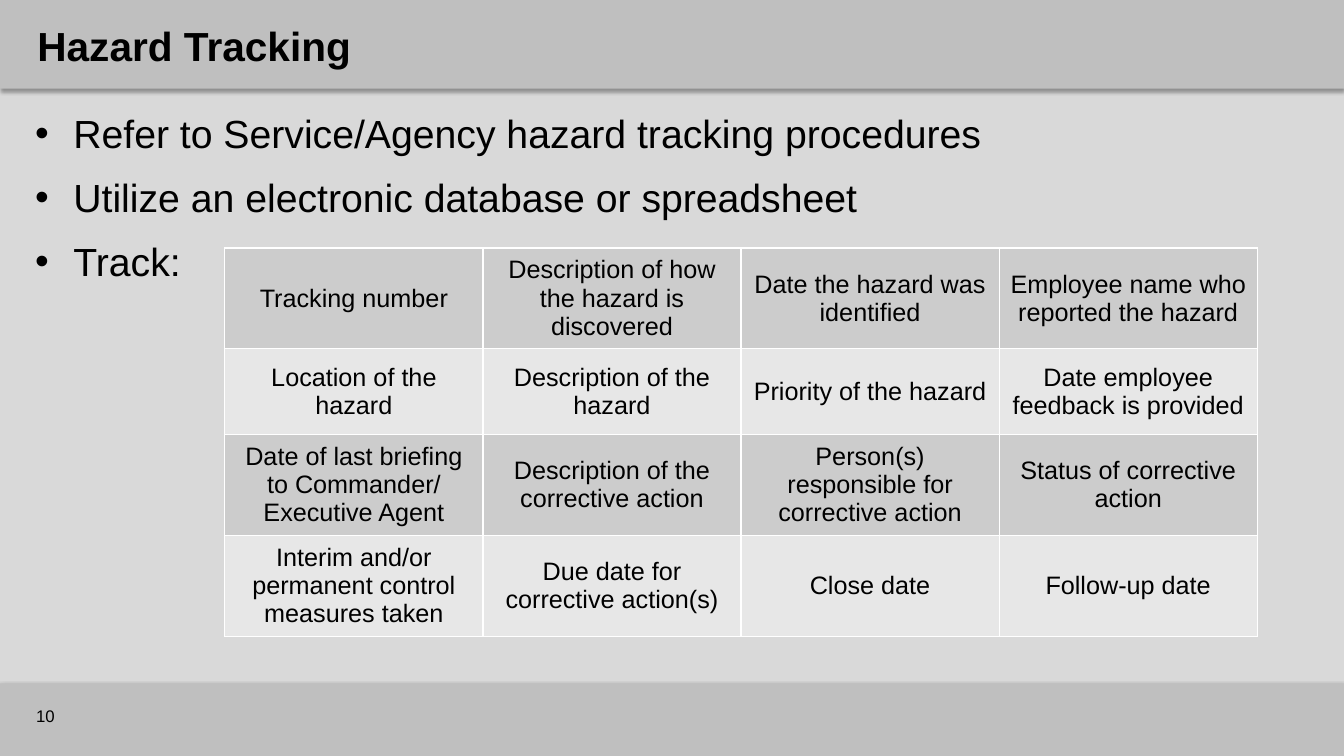
"""Build the Hazard Tracking slide with its bullets and tracking table."""
from pptx import Presentation
from pptx.dml.color import RGBColor
from pptx.enum import shapes, text
from pptx.oxml import parse_xml
from pptx.oxml.ns import nsdecls
from pptx.util import Inches, Pt

TITLE = "Hazard Tracking"
PAGE = "10"
BULLETS = [
    "Refer to Service/Agency hazard tracking procedures",
    "Utilize an electronic database or spreadsheet",
    "Track:",
]
TRACKED = [
    ["Tracking number", "Description of how the hazard is discovered",
     "Date the hazard was identified", "Employee name who reported the hazard"],
    ["Location of the hazard", "Description of the hazard",
     "Priority of the hazard", "Date employee feedback is provided"],
    ["Date of last briefing to Commander/ Executive Agent",
     "Description of the corrective action",
     "Person(s) responsible for corrective action", "Status of corrective action"],
    ["Interim and/or permanent control measures taken",
     "Due date for corrective action(s)", "Close date", "Follow-up date"],
]
WIDTH, HEIGHT = 13.33, 7.5
BARS = [(0, 0.88), (6.78, 0.72)]
COLUMN_WIDTH, ROW_HEIGHT = 2.56, 0.85
BACKGROUND, BAR, BLACK, WHITE = "D9D9D9", "BFBFBF", "000000", "FFFFFF"
BANDS = ["CCCCCC", "E7E7E7"]


def paint(fill, color):
    fill.solid()
    fill.fore_color.rgb = RGBColor.from_string(color)


def write(paragraph, words, size, bold=False):
    run = paragraph.add_run()
    run.text = words
    run.font.name = "Arial"
    run.font.size = Pt(size)
    run.font.bold = bold
    run.font.color.rgb = RGBColor.from_string(BLACK)


def add_bar(slide, top, height):
    bar = slide.shapes.add_shape(shapes.MSO_SHAPE.RECTANGLE, 0, Inches(top),
                                 Inches(WIDTH), Inches(height))
    paint(bar.fill, BAR)
    bar.line.fill.background()
    bar._element.spPr.append(parse_xml(
        f'<a:effectLst {nsdecls("a")}><a:outerShdw blurRad="{Pt(3.1)}" dist="{Pt(1.8)}" '
        f'dir="5400000" rotWithShape="0"><a:srgbClr val="{BLACK}"><a:alpha val="35000"/>'
        '</a:srgbClr></a:outerShdw></a:effectLst>'))


def add_text_frame(slide, left, top, width, height):
    box = slide.shapes.add_textbox(Inches(left), Inches(top), Inches(width), Inches(height))
    box.text_frame.word_wrap = True
    return box.text_frame


def add_title(slide):
    title = slide.shapes.title
    title.left, title.top = Inches(0.27), Inches(0.14)
    title.width, title.height = Inches(12.93), Inches(0.62)
    title.text_frame.vertical_anchor = text.MSO_ANCHOR.MIDDLE
    paragraph = title.text_frame.paragraphs[0]
    paragraph.alignment = text.PP_ALIGN.LEFT
    write(paragraph, TITLE, 29, bold=True)
    slide.shapes._spTree.append(title._element)


def add_bullets(slide):
    frame = add_text_frame(slide, 0.25, 1.04, 12.83, 5.5)
    for index, words in enumerate(BULLETS):
        paragraph = frame.paragraphs[0] if index == 0 else frame.add_paragraph()
        properties = paragraph._p.get_or_add_pPr()
        properties.set("marL", str(Inches(0.38)))
        properties.set("indent", str(Inches(-0.38)))
        properties.append(parse_xml(
            f'<a:buClr {nsdecls("a")}><a:srgbClr val="{BLACK}"/></a:buClr>'))
        properties.append(parse_xml(f'<a:buFont {nsdecls("a")} typeface="Arial"/>'))
        properties.append(parse_xml(f'<a:buChar {nsdecls("a")} char="•"/>'))
        paragraph.space_before = Pt(6 if index else 0)
        paragraph.space_after = Pt(6)
        write(paragraph, words, 28)


def add_cell(cell, words, color):
    paint(cell.fill, color)
    cell.vertical_anchor = text.MSO_ANCHOR.MIDDLE
    paragraph = cell.text_frame.paragraphs[0]
    paragraph.alignment = text.PP_ALIGN.CENTER
    write(paragraph, words, 18)
    properties = cell._tc.get_or_add_tcPr()
    for index, side in enumerate(["lnL", "lnR", "lnT", "lnB"]):
        properties.insert(index, parse_xml(
            f'<a:{side} {nsdecls("a")} w="{Pt(1)}"><a:solidFill>'
            f'<a:srgbClr val="{WHITE}"/></a:solidFill></a:{side}>'))


def add_tracking_table(slide):
    rows, columns = len(TRACKED), len(TRACKED[0])
    table = slide.shapes.add_table(
        rows, columns, Inches(2.23), Inches(2.46),
        Inches(columns * COLUMN_WIDTH), Inches(rows * ROW_HEIGHT)).table
    for row, entries in enumerate(TRACKED):
        for column, words in enumerate(entries):
            add_cell(table.cell(row, column), words, BANDS[row % 2])


def main():
    presentation = Presentation()
    presentation.slide_width, presentation.slide_height = Inches(WIDTH), Inches(HEIGHT)
    slide = presentation.slides.add_slide(presentation.slide_layouts[5])
    paint(slide.background.fill, BACKGROUND)
    for top, height in BARS:
        add_bar(slide, top, height)
    add_title(slide)
    add_bullets(slide)
    page_frame = add_text_frame(slide, 0.26, 6.9, 1, 0.4)
    page_frame.vertical_anchor = text.MSO_ANCHOR.MIDDLE
    write(page_frame.paragraphs[0], PAGE, 12)
    add_tracking_table(slide)
    presentation.save("out.pptx")


if __name__ == "__main__":
    main()
